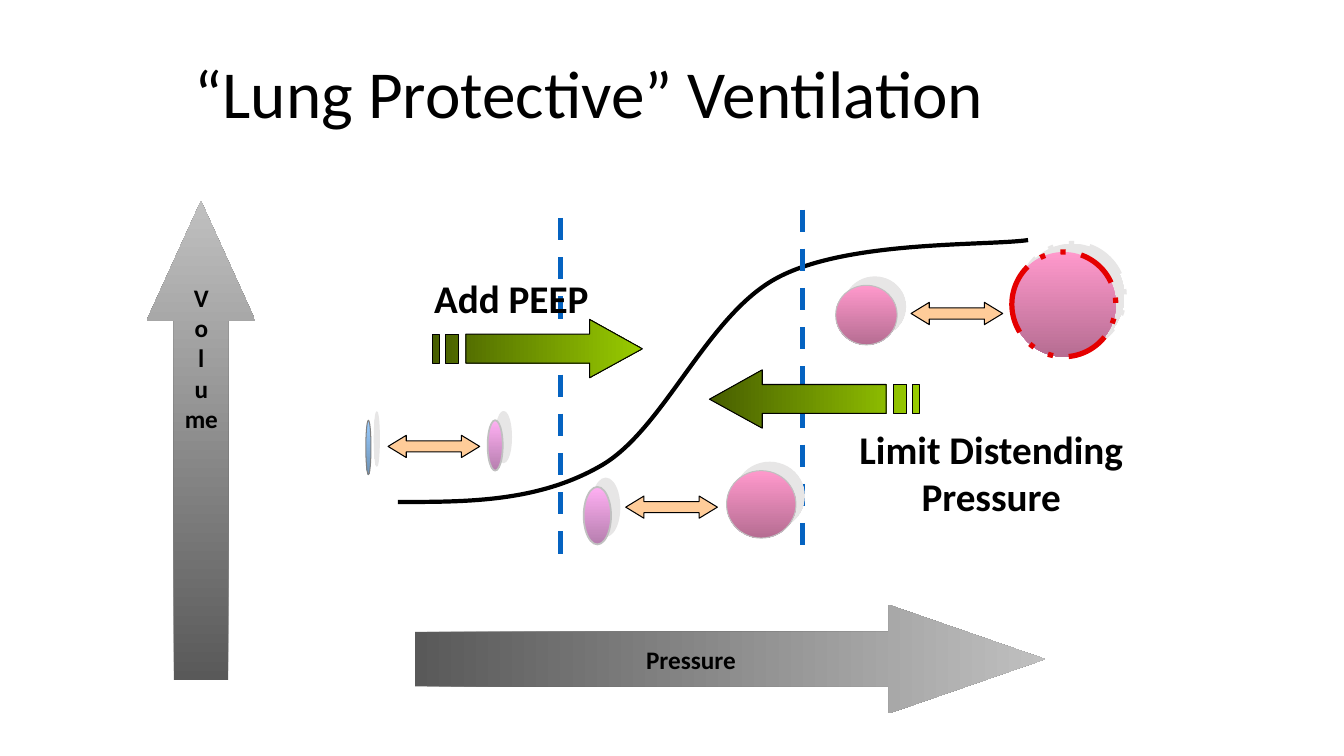
"""Build the lung protective ventilation slide with its pressure-volume curve."""
from typing import NamedTuple, Optional

from lxml import etree
from pptx import Presentation
from pptx import util as u
from pptx.dml.color import RGBColor
from pptx.enum import dml, shapes, text
from pptx.oxml import ns

COLORS = {
    "black": "000000", "blue": "0563C1", "red": "E50000", "peach": "FFCC99",
    "gray": "808080", "silver": "C0C0C0", "charcoal": "595959", "shadow": "E7E6E6",
    "sky": "99CCFF", "steel": "6D92B6", "lilac": "FFB0F3", "plum": "B67EAE",
    "pink": "FF99CC", "rose": "B66D92", "olive": "475E00", "lime": "99CC00",
}

class Alveolus(NamedTuple):
    left: float
    top: float
    width: float
    height: float
    light: str
    dark: str
    outline: str
    weight: float
    dash: Optional[dml.MSO_LINE] = None

class Axis(NamedTuple):
    left: float
    top: float
    length: float
    head: float
    rotation: int
    label: str

class Spot(NamedTuple):
    x: float
    y: float
    direction: int = 1

class Limit(NamedTuple):
    x: float
    top: float
    bottom: float

class Label(NamedTuple):
    left: float
    top: float
    width: float
    height: float
    lines: tuple
    size: int
    align: text.PP_ALIGN
    wrap: bool

ALVEOLI = [
    Alveolus(9.22, 10.59, 0.13, 1.37, "sky", "steel", "gray", 0.75),
    Alveolus(12.29, 10.59, 0.38, 1.27, "lilac", "plum", "silver", 1.25),
    Alveolus(14.71, 12.27, 0.69, 1.45, "lilac", "plum", "silver", 1.25),
    Alveolus(18.31, 11.86, 1.75, 1.7, "pink", "rose", "silver", 0.75),
    Alveolus(21.06, 7.19, 1.55, 1.5, "pink", "rose", "silver", 0.75),
    Alveolus(25.5, 6.35, 2.62, 2.64, "pink", "rose", "red", 3.75, dml.MSO_LINE.DASH_DOT_DOT),
]
BREATHS = [Spot(9.78, 10.97), Spot(15.77, 12.5), Spot(22.96, 7.62)]
AXES = [Axis(-0.97, 9.73, 12.07, 1.1, 270, ""), Axis(10.46, 15.24, 15.88, 1.44, 0, "Pressure")]
LIMITS = [Limit(14.12, 5.49, 13.97), Limit(20.22, 5.28, 13.79)]
PUSHES = [Spot(10.9, 8.05, 1), Spot(23.17, 9.32, -1)]
PUSH_CONTOURS = [
    [(3.96, 0), (3.96, 0.37), (0.84, 0.37), (0.84, 1.1), (3.96, 1.1), (3.96, 1.47), (5.29, 0.74)],
    [(0.33, 0.37), (0.33, 1.1), (0.66, 1.1), (0.66, 0.37)],
    [(0, 0.37), (0, 1.1), (0.17, 1.1), (0.17, 0.37)],
]
CURVE = [
    (10.03, 12.65), (11.81, 12.65), (13.59, 12.65), (15.19, 11.71), (16.76, 10.77),
    (17.83, 7.92), (19.61, 6.99), (21.39, 6.05), (24.87, 6.2), (25.91, 6.05),
]
CENTER, LEFT = text.PP_ALIGN.CENTER, text.PP_ALIGN.LEFT
LABELS = [
    Label(4.34, 6.99, 1.47, 4.11, ("V", "o", "l", "u", "me"), 18, CENTER, True),
    Label(10.69, 6.78, 4.45, 1.45, ("Add PEEP",), 28, LEFT, False),
    Label(21.36, 10.59, 7.24, 2.64, ("Limit Distending", "Pressure"), 28, CENTER, False),
]

def rgb(name: str) -> RGBColor:
    """Look up a named colour."""
    return RGBColor.from_string(COLORS[name])

def set_line(shape, color: str, weight: float, dash=None) -> None:
    """Format an outline or a connector."""
    shape.line.color.rgb = rgb(color)
    shape.line.width = u.Pt(weight)
    if dash is not None:
        shape.line.dash_style = dash

def set_gradient(shape, start: str, end: str, angle: int) -> None:
    """Fill a shape with a two-colour linear gradient."""
    shape.fill.gradient()
    shape.fill.gradient_angle = angle
    for stop, color, position in zip(shape.fill.gradient_stops, (start, end), (0, 1)):
        stop.color.rgb = rgb(color)
        stop.position = position

def write_lines(frame, lines: tuple, size: int, align, bold: bool = True) -> None:
    """Write one paragraph for each line."""
    for index, line in enumerate(lines):
        paragraph = frame.add_paragraph() if index else frame.paragraphs[0]
        paragraph.alignment = align
        run = paragraph.add_run()
        run.text = line
        run.font.name, run.font.size, run.font.bold = "Calibri", u.Pt(size), bold
        run.font.color.rgb = rgb("black")

def add_preset(slide, kind, left: float, top: float, width: float, height: float):
    """Add a preset shape without the theme shadow."""
    shape = slide.shapes.add_shape(kind, *map(u.Cm, (left, top, width, height)))
    shape.shadow.inherit = False
    return shape

def add_title(slide) -> None:
    """Place and format the title placeholder."""
    title = slide.shapes.title
    title.left, title.top, title.width, title.height = map(u.Cm, (4.65, 0.84, 24.28, 3.18))
    frame = title.text_frame
    frame.auto_size = text.MSO_AUTO_SIZE.NONE
    frame.vertical_anchor = text.MSO_ANCHOR.MIDDLE
    write_lines(frame, ("“Lung Protective” Ventilation",), 48, LEFT, False)
    frame.paragraphs[0].line_spacing = 0.9

def add_curve(slide) -> None:
    """Draw the curve, joining each three control points into a Bézier segment."""
    points = [(u.Cm(x), u.Cm(y)) for x, y in CURVE]
    builder = slide.shapes.build_freeform(*points[0])
    builder.add_line_segments(points[1:], close=False)
    curve = builder.convert_to_shape()
    curve.shadow.inherit = False
    curve.fill.background()
    set_line(curve, "black", 3)
    segments = list(curve.element.iter(ns.qn("a:lnTo")))
    outline = segments[0].getparent()
    for start in range(0, len(segments), 3):
        bezier = etree.SubElement(outline, ns.qn("a:cubicBezTo"))
        for segment in segments[start:start + 3]:
            bezier.append(segment[0])
            outline.remove(segment)

def add_limit(slide, limit: Limit) -> None:
    """Draw a dashed vertical limit."""
    ends = map(u.Cm, (limit.x, limit.top, limit.x, limit.bottom))
    line = slide.shapes.add_connector(shapes.MSO_CONNECTOR.STRAIGHT, *ends)
    set_line(line, "blue", 4, dml.MSO_LINE.DASH)
    etree.SubElement(line.element.spPr, ns.qn("a:effectLst"))

def add_alveolus(slide, item: Alveolus) -> None:
    """Draw an alveolus with its offset shadow."""
    shape = add_preset(slide, shapes.MSO_SHAPE.OVAL, *item[:4])
    set_gradient(shape, item.light, item.dark, 270)
    set_line(shape, item.outline, item.weight, item.dash)
    effects = shape.element.spPr.find(ns.qn("a:effectLst"))
    shadow = etree.SubElement(effects, ns.qn("a:outerShdw"), blurRad="0",
                              dist=str(u.Pt(8.5)), dir="18900000", algn="ctr", rotWithShape="0")
    etree.SubElement(shadow, ns.qn("a:srgbClr"), val=COLORS["shadow"])

def add_breath(slide, spot: Spot) -> None:
    """Draw a double arrow between two alveoli."""
    arrow = add_preset(slide, shapes.MSO_SHAPE.LEFT_RIGHT_ARROW, spot.x, spot.y, 2.31, 0.56)
    arrow.adjustments[1] = 0.82
    arrow.fill.solid()
    arrow.fill.fore_color.rgb = rgb("peach")
    set_line(arrow, "black", 0.75)

def add_axis(slide, axis: Axis) -> None:
    """Draw a wide gray axis arrow."""
    arrow = add_preset(slide, shapes.MSO_SHAPE.RIGHT_ARROW, axis.left, axis.top, axis.length, 2.74)
    arrow.adjustments[1] = axis.head
    arrow.rotation = axis.rotation
    set_gradient(arrow, "charcoal", "silver", 0)
    arrow.line.fill.background()
    if axis.label:
        arrow.text_frame.word_wrap = False
        write_lines(arrow.text_frame, (axis.label,), 18, CENTER)

def add_push(slide, push: Spot) -> None:
    """Draw a striped green arrow pointing left or right."""
    contours = [[(u.Cm(push.x + push.direction * x), u.Cm(push.y + y)) for x, y in contour]
                for contour in PUSH_CONTOURS]
    builder = slide.shapes.build_freeform(*contours[0][0])
    builder.add_line_segments(contours[0][1:], close=True)
    for contour in contours[1:]:
        builder.move_to(*contour[0])
        builder.add_line_segments(contour[1:], close=True)
    arrow = builder.convert_to_shape()
    arrow.shadow.inherit = False
    set_gradient(arrow, "olive", "lime", 0)
    set_line(arrow, "black", 0.75)

def add_label(slide, label: Label) -> None:
    """Add a bold text box."""
    box = slide.shapes.add_textbox(*map(u.Cm, label[:4]))
    box.text_frame.word_wrap = label.wrap
    write_lines(box.text_frame, label.lines, label.size, label.align)

presentation = Presentation()
presentation.slide_width, presentation.slide_height = u.Cm(33.87), u.Cm(19.05)
main_slide = presentation.slides.add_slide(presentation.slide_layouts[5])
add_title(main_slide)
add_curve(main_slide)
for draw, items in ((add_limit, LIMITS), (add_alveolus, ALVEOLI), (add_breath, BREATHS),
                    (add_axis, AXES), (add_push, PUSHES), (add_label, LABELS)):
    for entry in items:
        draw(main_slide, entry)
presentation.save("out.pptx")
